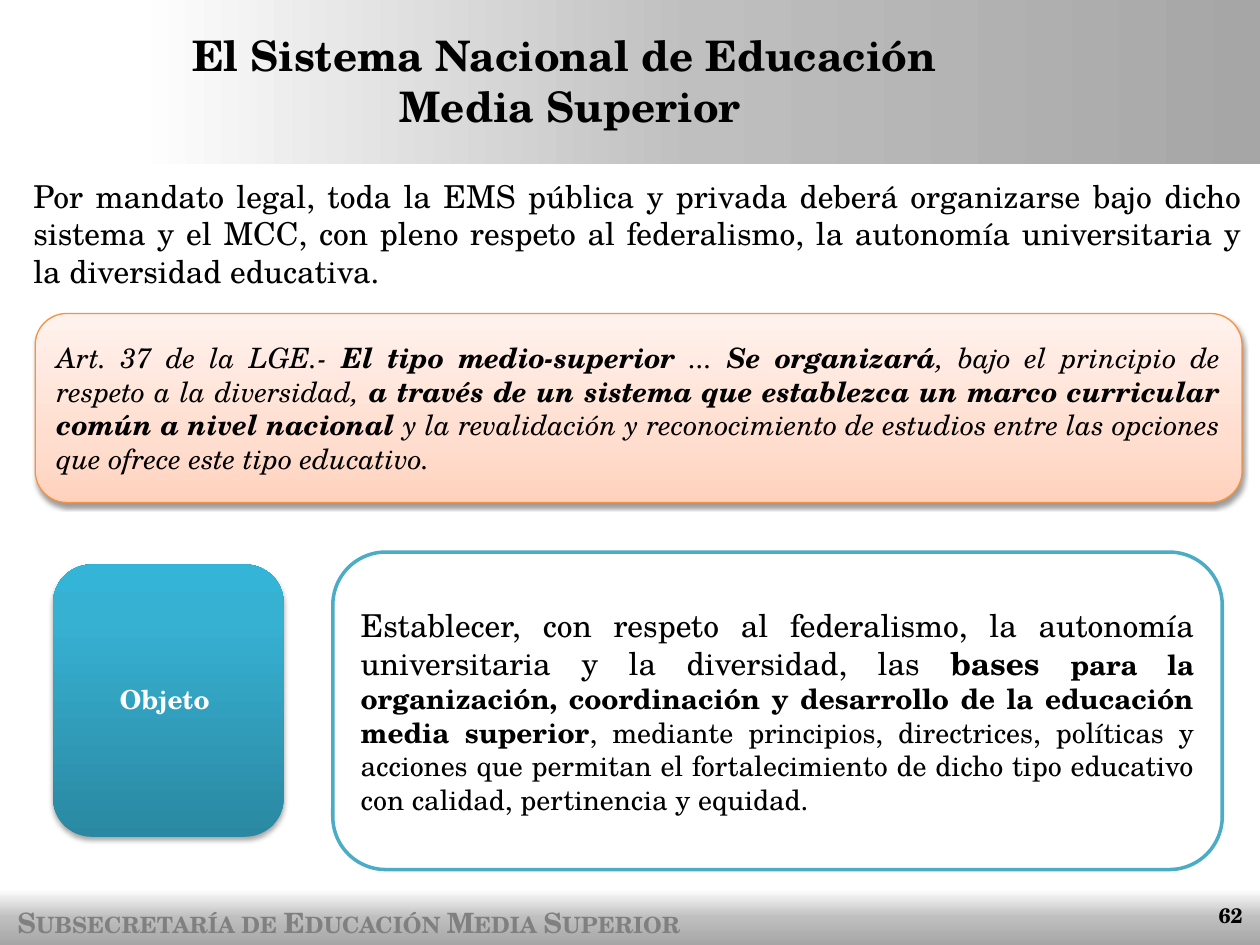
from dataclasses import dataclass

from pptx import Presentation
from pptx.dml.color import RGBColor
from pptx.enum.shapes import MSO_SHAPE
from pptx.enum.text import MSO_ANCHOR, PP_ALIGN
from pptx.oxml import parse_xml
from pptx.oxml.ns import nsdecls, qn
from pptx.util import Cm, Pt


@dataclass(frozen=True)
class Theme:
    """Colours, gradients and type sizes of the deck."""
    font: str = "TeX Gyre Schola"
    ink: str = "000000"
    paper: str = "FFFFFF"
    muted: str = "808080"
    teal: str = "4BACC6"
    orange: str = "F69240"
    grey: tuple = ((0, "FFFFFF"), (50, "BFBFBF"), (100, "A6A6A6"))
    peach: tuple = ((0, "FFD2BD"), (35, "FFDED0"), (100, "FFF2ED"))
    blue: tuple = ((0, "2A88A2"), (80, "37B1D2"), (100, "34B4D6"))
    title: int = 24
    lead: int = 18
    body: int = 16
    label: int = 15
    small: int = 12


class Deck:
    """Draws styled elements on the current slide."""

    def __init__(self, theme, slide):
        """Keep the theme and the slide."""
        self.theme = theme
        self.slide = slide

    def shape(self, box, kind=MSO_SHAPE.ROUNDED_RECTANGLE, fill=None, line=None, width=1):
        """Add a preset shape with an optional plain fill and outline."""
        item = self.slide.shapes.add_shape(kind, *map(Cm, box))
        item.shadow.inherit = False
        if fill:
            item.fill.solid()
            item.fill.fore_color.rgb = RGBColor.from_string(fill)
        else:
            item.fill.background()
        if line:
            item.line.color.rgb = RGBColor.from_string(line)
            item.line.width = Pt(width)
        else:
            item.line.fill.background()
        return item

    def blend(self, item, stops, angle):
        """Fill a shape with a linear gradient."""
        marks = "".join(
            f'<a:gs pos="{pos * 1000}"><a:srgbClr val="{color}"/></a:gs>'
            for pos, color in stops)
        item.fill.gradient()
        props = item._element.spPr
        props.replace(props.find(qn("a:gradFill")), parse_xml(
            f'<a:gradFill {nsdecls("a")} rotWithShape="1"><a:gsLst>{marks}</a:gsLst>'
            f'<a:lin ang="{angle * 60000}" scaled="0"/></a:gradFill>'))

    def shade(self, item, alpha, blur, dist):
        """Cast a soft shadow below a shape."""
        item._element.spPr.find(qn("a:effectLst")).append(parse_xml(
            f'<a:outerShdw {nsdecls("a")} blurRad="{Pt(blur)}" dist="{Pt(dist)}" '
            f'dir="5400000" rotWithShape="0"><a:srgbClr val="{self.theme.ink}">'
            f'<a:alpha val="{alpha * 1000}"/></a:srgbClr></a:outerShdw>'))

    def band(self, box, angle):
        """Add a grey gradient band."""
        self.blend(self.shape(box, MSO_SHAPE.RECTANGLE), self.theme.grey, angle)

    def label(self, item, parts, size, align, color=None, bold=None, italic=None,
              anchor=MSO_ANCHOR.MIDDLE):
        """Set one paragraph from (text, bold, size) parts or a plain string."""
        frame = item.text_frame
        frame.word_wrap = True
        frame.vertical_anchor = anchor
        para = frame.paragraphs[0]
        para.alignment = align
        if isinstance(parts, str):
            para.text = parts
        else:
            for text, strong, points in parts:
                run = para.add_run()
                run.text = text
                run.font.bold = strong
                if points != size:
                    run.font.size = Pt(points)
        font = para.font
        font.name = self.theme.font
        font.size = Pt(size)
        font.bold = bold
        font.italic = italic
        font.color.rgb = RGBColor.from_string(color or self.theme.ink)
        return para

    def text(self, box, words, size, align, **style):
        """Add a bold text box."""
        item = self.slide.shapes.add_textbox(*map(Cm, box))
        return item, self.label(item, words, size, align, bold=True, **style)


def main():
    """Build the slide and save it."""
    show = Presentation()
    show.slide_width, show.slide_height = Cm(25.4), Cm(19.05)
    look = Theme()
    deck = Deck(look, show.slides.add_slide(show.slide_layouts[6]))

    deck.band((0, 17.93, 25.4, 1.12), 90)
    _, foot = deck.text((0.1, 18.14, 16.41, 0.94), "Subsecretaría de Educación Media Superior",
                        look.body, PP_ALIGN.LEFT, color=look.muted, anchor=MSO_ANCHOR.TOP)
    foot.runs[0]._r.get_or_add_rPr().set("cap", "small")
    deck.band((2.69, 0, 22.71, 3.3), 0)
    deck.text((3.1, -0.05, 16.79, 3.33), "El Sistema Nacional de Educación \vMedia Superior",
              look.title, PP_ALIGN.CENTER)

    law = deck.shape((0.71, 6.32, 24.33, 3.81), line=look.orange, width=0.75)
    deck.blend(law, look.peach, 270)
    deck.shade(law, 38, 3.1, 1.6)
    quote = (
        "Art. 37 de la LGE.- ",
        "El tipo medio-superior",
        " ... ",
        "Se organizará",
        ", bajo el principio de respeto a la diversidad, ",
        "a través de un sistema que establezca un marco curricular común a nivel nacional ",
        "y la revalidación y reconocimiento de estudios entre las opciones que ofrece "
        "este tipo educativo.",
    )
    deck.label(law, [(text, n % 2 == 1, look.body) for n, text in enumerate(quote)],
               look.body, PP_ALIGN.JUSTIFY, italic=True)

    deck.label(deck.shape((0.3, 3.45, 25.1, 2.51)),
               "Por mandato legal, toda la EMS pública y privada deberá organizarse bajo dicho "
               "sistema y el MCC, con pleno respeto al federalismo, la autonomía universitaria "
               "y la diversidad educativa.", look.lead, PP_ALIGN.JUSTIFY)

    goal = deck.shape((6.71, 11.13, 17.93, 6.4), fill=look.paper, line=look.teal, width=2)
    deck.label(goal, [
        ("Establecer, con respeto al federalismo, la autonomía universitaria y la "
         "diversidad, las ", False, look.lead),
        ("bases ", True, look.lead),
        ("para la organización, coordinación y desarrollo de la educación media superior",
         True, look.body),
        (", mediante principios, directrices, políticas y acciones que permitan el "
         "fortalecimiento de dicho tipo educativo con calidad, pertinencia y equidad.",
         False, look.body),
    ], look.lead, PP_ALIGN.JUSTIFY)

    tile = deck.shape((1.07, 11.38, 4.65, 5.49))
    deck.blend(tile, look.blue, 270)
    deck.shade(tile, 35, 3.1, 1.8)
    name, line = deck.text((1.3, 11.61, 4.19, 5.03), "Objeto ", look.label,
                           PP_ALIGN.CENTER, color=look.paper)
    line.line_spacing = 0.9
    frame = name.text_frame
    frame.margin_left = frame.margin_right = Cm(0.15)
    frame.margin_top = frame.margin_bottom = Cm(0.08)

    deck.text((19.38, 17.93, 5.92, 1.02), "62", look.small, PP_ALIGN.RIGHT)
    show.save("out.pptx")


if __name__ == "__main__":
    main()
